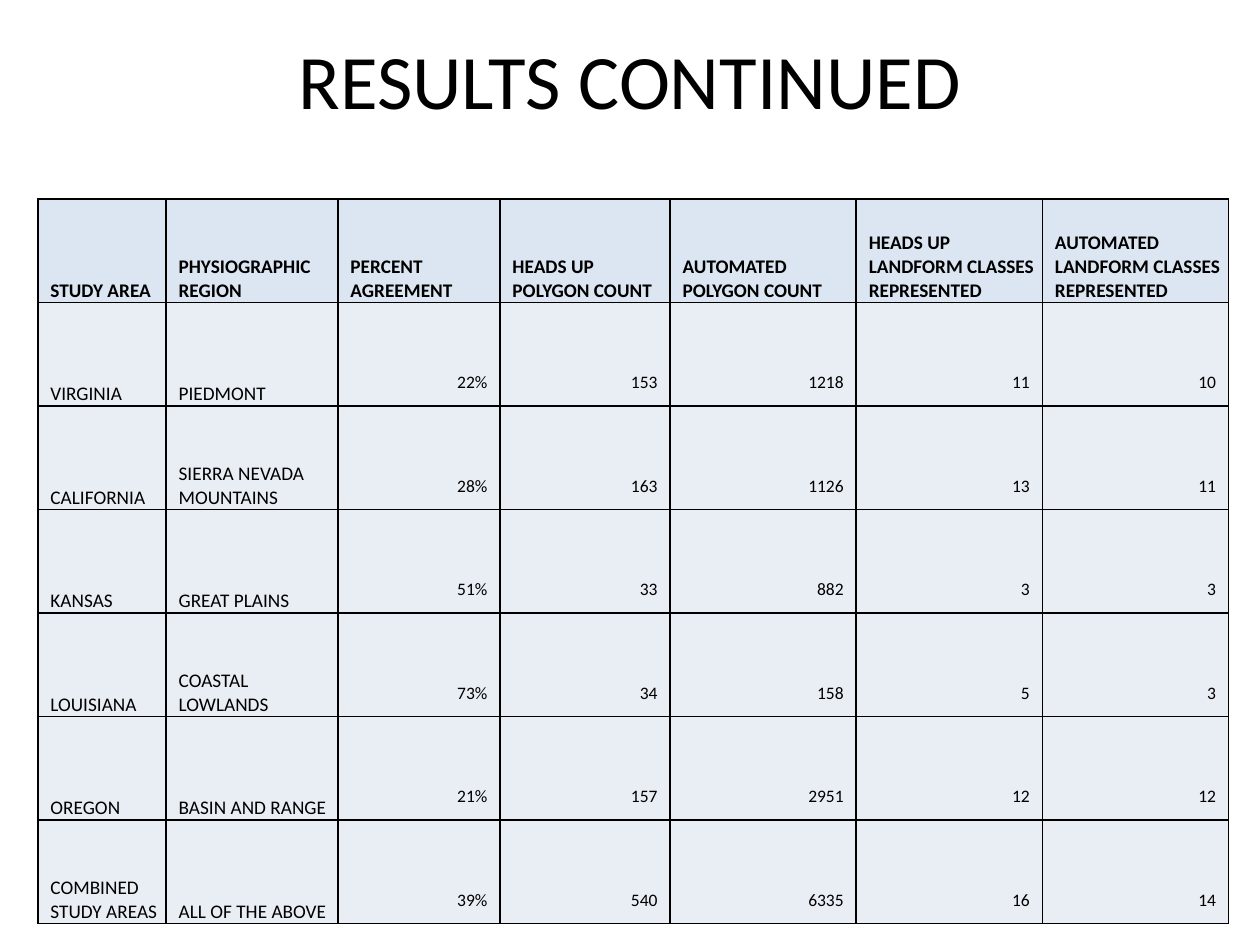
from lxml import etree
from pptx import Presentation
from pptx.dml.color import RGBColor
from pptx.enum.text import MSO_ANCHOR, PP_ALIGN
from pptx.oxml.ns import qn
from pptx.util import Pt

BOTTOM, MIDDLE = MSO_ANCHOR.BOTTOM, MSO_ANCHOR.MIDDLE
LEFT, CENTER, RIGHT = PP_ALIGN.LEFT, PP_ALIGN.CENTER, PP_ALIGN.RIGHT

THEME = {
    "font": "Calibri",
    "ink": "000000",
    "header_fill": "DCE6F2",
    "body_fill": "E9EDF4",
    "title_size": 44,
    "label_size": 11,
    "number_size": 10,
    "border_width": 1,
}

HEADERS = ["STUDY AREA", "PHYSIOGRAPHIC REGION", "PERCENT AGREEMENT",
           "HEADS UP POLYGON COUNT", "AUTOMATED POLYGON COUNT",
           "HEADS UP LANDFORM CLASSES REPRESENTED",
           "AUTOMATED LANDFORM CLASSES REPRESENTED"]
RESULTS = [
    ["VIRGINIA", "PIEDMONT", "22%", 153, 1218, 11, 10],
    ["CALIFORNIA", "SIERRA NEVADA MOUNTAINS", "28%", 163, 1126, 13, 11],
    ["KANSAS", "GREAT PLAINS", "51%", 33, 882, 3, 3],
    ["LOUISIANA", "COASTAL LOWLANDS", "73%", 34, 158, 5, 3],
    ["OREGON", "BASIN AND RANGE", "21%", 157, 2951, 12, 12],
    ["COMBINED STUDY AREAS", "ALL OF THE ABOVE", "39%", 540, 6335, 16, 14],
]
LABEL_COLUMNS = 2
COLUMN_WIDTHS = [73.3, 98.2, 92.6, 97.2, 106.4, 106.4, 106.4]
ROW_HEIGHT = 59.14

LABEL_FORMAT = {"margin_left": Pt(7.2), "margin_top": Pt(0.7),
                "margin_right": Pt(0.7), "margin_bottom": Pt(0),
                "vertical_anchor": BOTTOM}
NUMBER_FORMAT = {**LABEL_FORMAT, "margin_right": Pt(7.2), "margin_bottom": Pt(7.2)}


def write(paragraph, text, size, align, bold=False):
    paragraph.alignment = align
    run = paragraph.add_run()
    run.text = str(text)
    for attribute, value in {"name": THEME["font"], "size": Pt(size), "bold": bold}.items():
        setattr(run.font, attribute, value)
    run.font.color.rgb = RGBColor.from_string(THEME["ink"])


def add_borders(cell):
    properties = cell._tc.get_or_add_tcPr()
    for side in ("a:lnL", "a:lnR", "a:lnT", "a:lnB"):
        line = etree.SubElement(properties, qn(side), w=str(Pt(THEME["border_width"])))
        fill = etree.SubElement(line, qn("a:solidFill"))
        etree.SubElement(fill, qn("a:srgbClr"), val=THEME["ink"])


prs = Presentation()
prs.slide_width, prs.slide_height = Pt(720), Pt(540)
slide = prs.slides.add_slide(prs.slide_layouts[5])

title = slide.shapes.title
for attribute, value in {"left": 36, "top": 0, "width": 648, "height": 90}.items():
    setattr(title, attribute, Pt(value))
title.text_frame.vertical_anchor = MIDDLE
write(title.text_frame.paragraphs[0], "RESULTS CONTINUED", THEME["title_size"], CENTER)

rows = [HEADERS] + RESULTS
results_table = slide.shapes.add_table(
    len(rows), len(HEADERS), Pt(21.6), Pt(113.8),
    Pt(sum(COLUMN_WIDTHS)), Pt(ROW_HEIGHT * len(rows))).table
for column, width in zip(results_table.columns, COLUMN_WIDTHS):
    column.width = Pt(width)

for r, values in enumerate(rows):
    results_table.rows[r].height = Pt(ROW_HEIGHT)
    is_header = r == 0
    for c, value in enumerate(values):
        cell = results_table.cell(r, c)
        is_label = is_header or c < LABEL_COLUMNS
        for attribute, setting in (LABEL_FORMAT if is_label else NUMBER_FORMAT).items():
            setattr(cell, attribute, setting)
        add_borders(cell)
        cell.fill.solid()
        cell.fill.fore_color.rgb = RGBColor.from_string(
            THEME["header_fill" if is_header else "body_fill"])
        write(cell.text_frame.paragraphs[0], value,
              THEME["label_size" if is_label else "number_size"],
              LEFT if is_label else RIGHT, bold=is_header)

prs.save("out.pptx")
